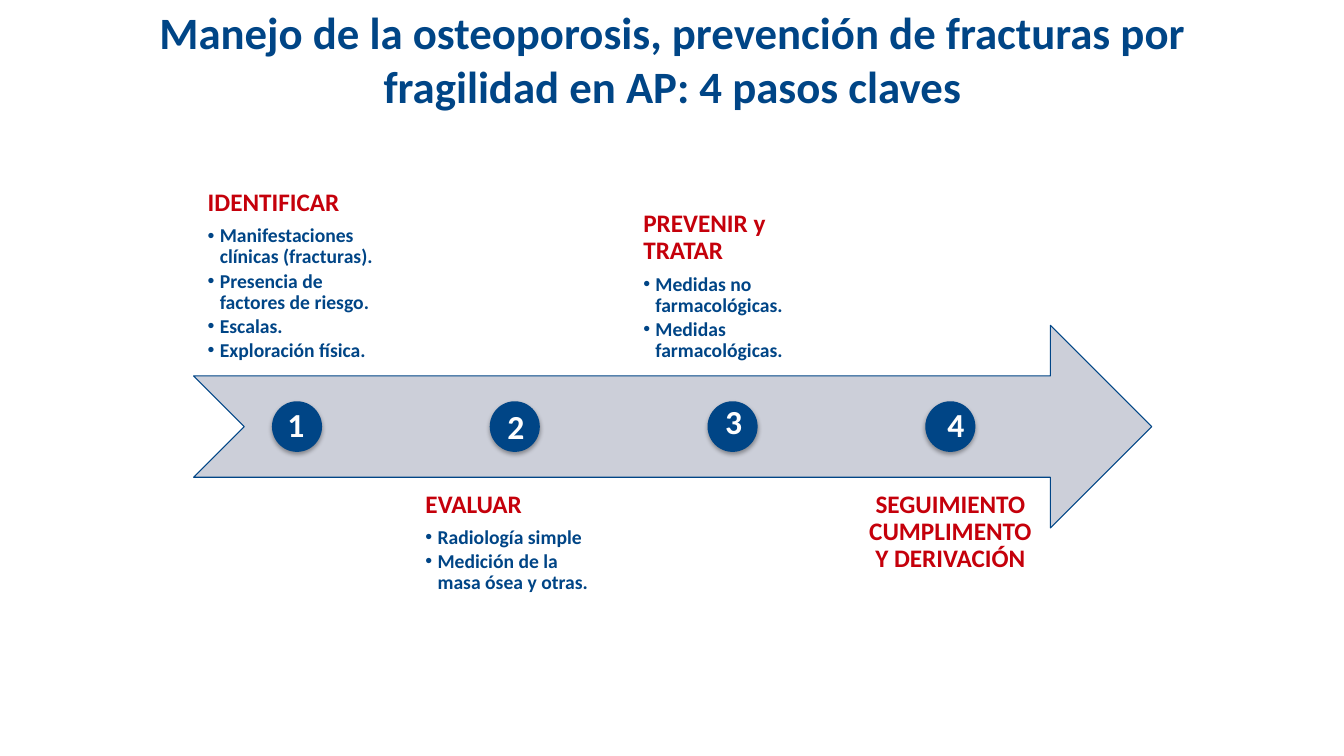
from lxml import etree
from pptx import Presentation
from pptx.dml.color import RGBColor
from pptx.enum.shapes import MSO_SHAPE
from pptx.enum.text import MSO_ANCHOR, MSO_AUTO_SIZE, PP_ALIGN
from pptx.oxml import parse_xml
from pptx.oxml.ns import nsdecls, qn
from pptx.util import Inches, Pt

ARROW, DOT = MSO_SHAPE.NOTCHED_RIGHT_ARROW, MSO_SHAPE.OVAL
TOP, MIDDLE, BOTTOM = MSO_ANCHOR.TOP, MSO_ANCHOR.MIDDLE, MSO_ANCHOR.BOTTOM
LEFT, CENTER = PP_ALIGN.LEFT, PP_ALIGN.CENTER
FIXED = MSO_AUTO_SIZE.NONE

NAVY = RGBColor(0x00, 0x45, 0x86)
RED = RGBColor(0xC5, 0x00, 0x0B)
GREY = RGBColor(0xCC, 0xCF, 0xD9)
WHITE = RGBColor(0xFE, 0xFE, 0xFE)

# Grid: one column per step, one row per arrow height
X0, Y0 = 1.92, 1.72
COL, ROW = 2.16, 2.01

TITLE = ("Manejo de la osteoporosis, prevención de fracturas por "
         "fragilidad en AP: 4 pasos claves")
STEPS = [
    ("IDENTIFICAR", ["Manifestaciones clínicas (fracturas).",
                     "Presencia de factores de riesgo.",
                     "Escalas.", "Exploración física."]),
    ("EVALUAR", ["Radiología simple", "Medición de la masa ósea y otras."]),
    ("PREVENIR y TRATAR", ["Medidas no farmacológicas.",
                           "Medidas farmacológicas."]),
    ("SEGUIMIENTO CUMPLIMENTO Y DERIVACIÓN", []),
]
# Column and row of each step number
DIGITS = [(0.38, 1.11), (1.39, 1.12), (2.39, 1.1), (3.41, 1.11)]


class Board:
    font = "Calibri"

    def __init__(self, slide):
        self.slide = slide

    def box(self, col, row, wide, high):
        return (Inches(X0 + col * COL), Inches(Y0 + row * ROW),
                Inches(wide * COL), Inches(high * ROW))

    def place(self, item, *cell):
        item.left, item.top, item.width, item.height = self.box(*cell)

    def style(self, para, size, color, align):
        para.alignment = align
        for run in para.runs:
            font = run.font
            font.name, font.size, font.bold = self.font, Pt(size), True
            font.color.rgb = color

    def title(self, text, *cell):
        item = self.slide.shapes.title
        self.place(item, *cell)
        frame = item.text_frame
        frame.text = text
        frame.auto_size, frame.vertical_anchor = FIXED, MIDDLE
        self.style(frame.paragraphs[0], 32, NAVY, CENTER)

    def bullet(self, para, char):
        props = para._p.get_or_add_pPr()
        indent = Inches(0.12) if char else 0
        props.set("marL", str(indent))
        props.set("indent", str(-indent))
        if char:
            etree.SubElement(props, qn("a:buChar")).set("char", char)
        else:
            etree.SubElement(props, qn("a:buNone"))

    def step(self, item, head, points, anchor, *cell):
        self.place(item, *cell)
        frame = item.text_frame
        frame.text = "\n".join([head] + points)
        frame.auto_size, frame.vertical_anchor = FIXED, anchor
        frame.margin_left = frame.margin_right = Inches(0.14)
        frame.margin_top = frame.margin_bottom = Inches(0.14)
        for rank, para in enumerate(frame.paragraphs):
            self.bullet(para, "•" if rank else "")
            para.level = 1 if rank else 0
            para.line_spacing, para.space_before = 0.9, Pt(0)
            para.space_after = Pt(2.1 if rank else 6.3)
            size, color = (14, NAVY) if rank else (18, RED)
            self.style(para, size, color, LEFT if points else CENTER)

    def shape(self, kind, fill, *cell):
        item = self.slide.shapes.add_shape(kind, *self.box(*cell))
        item.shadow.inherit = False
        item.fill.solid()
        item.fill.fore_color.rgb = fill
        return item

    def arrow(self, *cell):
        item = self.shape(ARROW, GREY, *cell)
        item.line.color.rgb = NAVY
        item.line.width = Pt(0.75)

    def dot(self, *cell):
        item = self.shape(DOT, NAVY, *cell)
        item.line.fill.background()
        glow = item._element.spPr.find(qn("a:effectLst"))
        glow.append(parse_xml(
            f'<a:outerShdw {nsdecls("a")} blurRad="40000" dist="23000" '
            'dir="5400000" rotWithShape="0"><a:srgbClr val="000000">'
            '<a:alpha val="35000"/></a:srgbClr></a:outerShdw>'))

    def digit(self, text, *cell):
        item = self.slide.shapes.add_textbox(*self.box(*cell))
        frame = item.text_frame
        frame.text = text
        frame.word_wrap, frame.vertical_anchor = False, MIDDLE
        para = frame.paragraphs[0]
        self.style(para, 24, WHITE, CENTER)
        props = para.runs[0].font._element
        props.set("spc", "50")
        props.insert(0, parse_xml(
            f'<a:ln {nsdecls("a")} w="9525"><a:solidFill>'
            f'<a:srgbClr val="{NAVY}"/></a:solidFill></a:ln>'))


def main():
    deck = Presentation()
    deck.slide_width, deck.slide_height = Inches(13.33), Inches(7.5)
    slide = deck.slides.add_slide(deck.slide_layouts[4])
    board = Board(slide)

    # Heading and arrow
    board.title(TITLE, -0.58, -0.73, 5.56, 0.33)
    board.arrow(0, 0.75, 4.4, 1)

    # Steps, alternately above and below the arrow
    bodies = list(slide.placeholders)[1:]
    for i, (item, (head, points)) in enumerate(zip(bodies, STEPS)):
        row, anchor = (1.5, TOP) if i % 2 else (0, BOTTOM)
        board.step(item, head, points, anchor, i, row, 0.95, 1)
        board.dot(i + 0.36, 1.125, 0.23, 0.25)

    # Step numbers
    for i, (col, row) in enumerate(DIGITS, 1):
        board.digit(str(i), col, row, 0.18, 0.25)

    deck.save("out.pptx")


if __name__ == "__main__":
    main()
